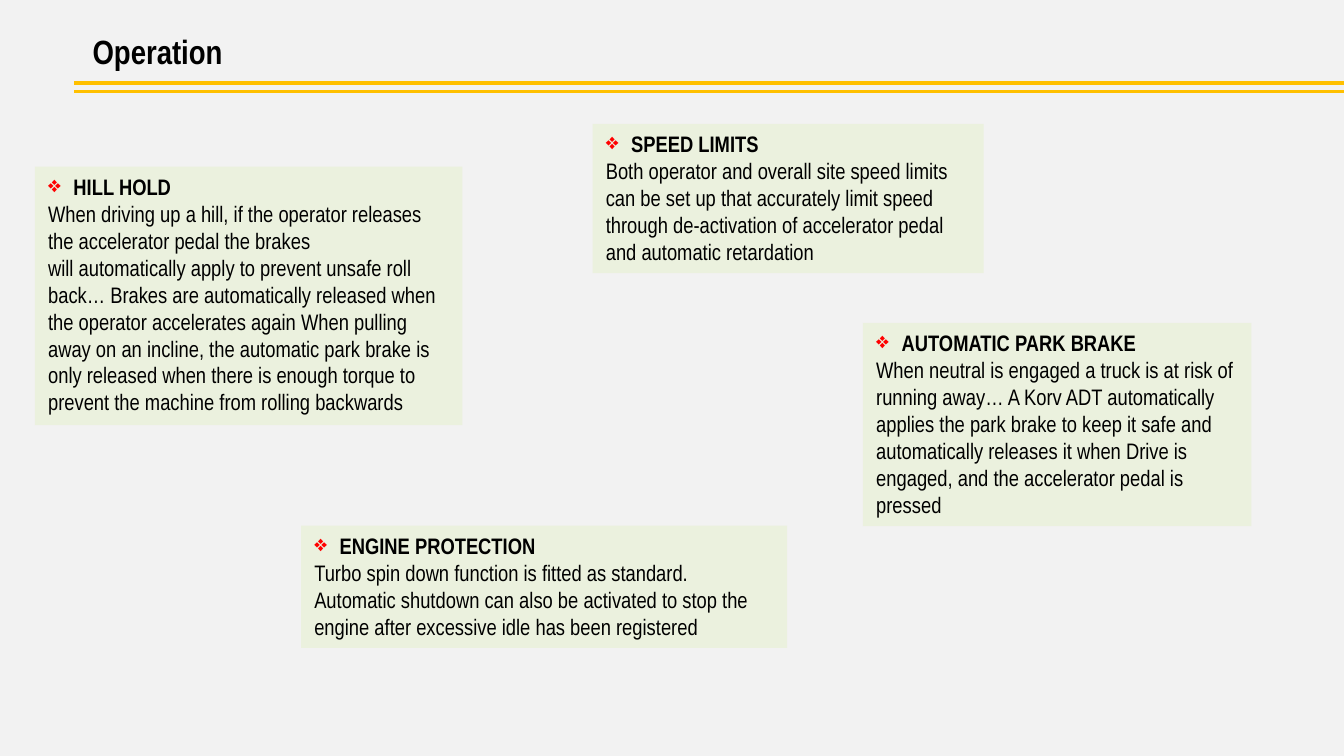
from lxml import etree
from pptx import Presentation
from pptx.dml.color import RGBColor
from pptx.enum import shapes, text
from pptx.oxml.ns import qn
from pptx.util import Cm, Pt

FONT = "Arial Narrow"
INK, PAPER, GOLD, PANEL, RED = "000000", "F2F2F2", "FFC000", "EBF1DE", "FF0000"

# Content: heading, paragraphs, (left, top, width, height) in cm
title = "Operation"
features = [
    ("SPEED LIMITS",
     ["Both operator and overall site speed limits can be set up that accurately "
      "limit speed through de-activation of accelerator pedal and automatic retardation"],
     (11.2, 2.34, 7.39, 2.82)),
    ("HILL HOLD",
     ["When driving up a hill, if the operator releases the accelerator pedal the brakes",
      "will automatically apply to prevent unsafe roll back… Brakes are automatically "
      "released when the operator accelerates again When pulling away on an incline, "
      "the automatic park brake is only released when there is enough torque to "
      "prevent the machine from rolling backwards"],
     (0.66, 3.15, 8.08, 4.88)),
    ("ENGINE PROTECTION",
     ["Turbo spin down function is fitted as standard. Automatic shutdown can also be "
      "activated to stop the engine after excessive idle has been registered"],
     (5.69, 9.93, 9.19, 2.31)),
    ("AUTOMATIC PARK BRAKE",
     ["When neutral is engaged a truck is at risk of running away… A Korv ADT "
      "automatically applies the park brake to keep it safe and automatically releases "
      "it when Drive is engaged, and the accelerator pedal is pressed"],
     (16.31, 6.1, 7.34, 3.84)),
]
title_rules = [(1.57, 2.5), (1.73, 1.5)]  # height in cm, weight in points


def color(hex_string):
    return RGBColor.from_string(hex_string)


def set_font(paragraph, size, bold):
    font = paragraph.font
    font.name, font.size, font.bold = FONT, Pt(size), bold
    font.color.rgb = color(INK)


def add_bullet(paragraph):
    props = paragraph._p.get_or_add_pPr()
    props.set("marL", str(Cm(0.48)))
    props.set("indent", str(-Cm(0.48)))
    tint = etree.SubElement(props, qn("a:buClr"))
    etree.SubElement(tint, qn("a:srgbClr"), val=RED)
    etree.SubElement(props, qn("a:buChar"), char="❖")


deck = Presentation()
deck.slide_width, deck.slide_height = Cm(25.4), Cm(14.28)
slide = deck.slides.add_slide(deck.slide_layouts[6])
slide.background.fill.solid()
slide.background.fill.fore_color.rgb = color(PAPER)

# Double rule under the title
for y, weight in title_rules:
    rule = slide.shapes.add_connector(
        shapes.MSO_CONNECTOR.STRAIGHT, Cm(1.4), Cm(y), deck.slide_width, Cm(y))
    rule.line.color.rgb = color(GOLD)
    rule.line.width = Pt(weight)
    etree.SubElement(rule._element.spPr, qn("a:effectLst"))

# Feature panels
for heading, body, place in features:
    panel = slide.shapes.add_shape(
        shapes.MSO_SHAPE.RECTANGLE, *(Cm(length) for length in place))
    panel.shadow.inherit = False
    panel.fill.solid()
    panel.fill.fore_color.rgb = color(PANEL)
    panel.line.fill.background()
    frame = panel.text_frame
    frame.word_wrap = True
    frame.auto_size = text.MSO_AUTO_SIZE.SHAPE_TO_FIT_TEXT
    frame.vertical_anchor = text.MSO_ANCHOR.TOP
    frame.text = "\n".join([heading, *body])
    add_bullet(frame.paragraphs[0])
    for index, paragraph in enumerate(frame.paragraphs):
        paragraph.alignment = text.PP_ALIGN.LEFT
        set_font(paragraph, 12, index == 0)

# Title
title_box = slide.shapes.add_textbox(Cm(1.5), Cm(0.46), Cm(3.2), Cm(1.02))
title_box.text_frame.auto_size = text.MSO_AUTO_SIZE.SHAPE_TO_FIT_TEXT
title_box.text_frame.text = title
set_font(title_box.text_frame.paragraphs[0], 18, True)

deck.save("out.pptx")
